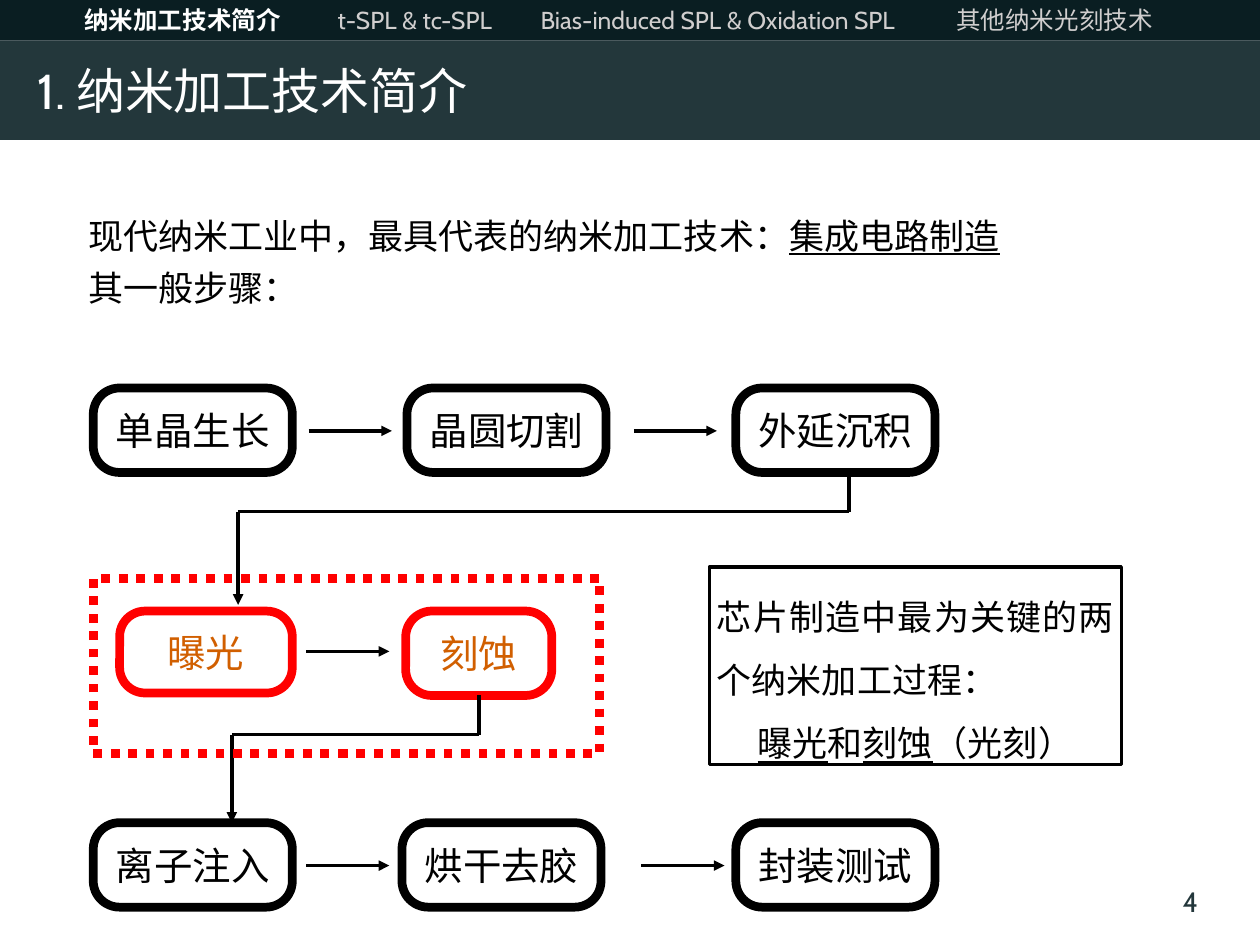
from dataclasses import dataclass

from lxml.etree import SubElement
from pptx import Presentation
from pptx.dml.color import RGBColor
from pptx.enum.dml import MSO_LINE
from pptx.enum.shapes import MSO_CONNECTOR, MSO_SHAPE
from pptx.enum.text import MSO_ANCHOR as Anchor, PP_ALIGN as Align
from pptx.oxml.ns import qn
from pptx.util import Inches, Pt

CELL = 0.1


@dataclass(frozen=True)
class Theme:
    """Colours, fonts, type sizes and line widths of the slide."""
    black: str = "000000"
    white: str = "FFFFFF"
    red: str = "FF0000"
    orange: str = "D15F00"
    grey: str = "D0CECE"
    teal: str = "23373B"
    dark: str = "0A1E22"
    latin: str = "Cabin"
    chinese: str = "Noto Sans CJK SC"
    title: int = 28
    step: int = 22
    body: int = 20
    number: int = 16
    navigation: int = 14
    border: int = 5
    rule: int = 2


THEME = Theme()


@dataclass(frozen=True)
class Box:
    """An area measured in grid columns and rows."""
    left: float
    top: float
    width: float
    height: float

    def inner(self, left, top, width, height):
        """Return an area placed relative to this one."""
        return Box(self.left + left, self.top + top, width, height)

    def inches(self):
        """Return the area as slide lengths."""
        return [Inches(round(n * CELL, 3)) for n in (self.left, self.top, self.width, self.height)]


def add_panel(slide, box, kind=MSO_SHAPE.RECTANGLE, fill=None, line=None, width=THEME.border):
    """Add a preset shape with a plain fill and outline."""
    shape = slide.shapes.add_shape(kind, *box.inches())
    shape.shadow.inherit = False
    if fill:
        shape.fill.solid()
        shape.fill.fore_color.rgb = RGBColor.from_string(fill)
    else:
        shape.fill.background()
    if line:
        shape.line.color.rgb = RGBColor.from_string(line)
        shape.line.width = Pt(width)
    else:
        shape.line.fill.background()
    return shape


def prepare_frame(shape, anchor, insets=(0.1, 0.05, 0.1, 0.05)):
    """Set the wrapping, anchor and margins of a text frame."""
    frame = shape.text_frame
    frame.word_wrap = True
    frame.vertical_anchor = anchor
    frame.margin_left, frame.margin_top, frame.margin_right, frame.margin_bottom = map(Inches, insets)
    return frame


def write_paragraph(paragraph, pieces, size, color, align, font=THEME.latin):
    """Write runs, underlining the pieces that are flagged."""
    paragraph.alignment = align
    paragraph.font.size = Pt(size)
    paragraph.font.color.rgb = RGBColor.from_string(color)
    paragraph.font.name = font
    defaults = paragraph._p.get_or_add_pPr().get_or_add_defRPr()
    SubElement(defaults, qn("a:ea"), typeface=THEME.chinese)
    for text, underlined in pieces:
        run = paragraph.add_run()
        run.text = text
        if underlined:
            run.font.underline = True


def add_line(slide, box, start, end, arrow=False, source=None):
    """Draw a straight line between two points of the box."""
    points = [Inches(round((origin + offset) * CELL, 3))
              for point in (start, end)
              for origin, offset in zip((box.left, box.top), point)]
    connector = slide.shapes.add_connector(MSO_CONNECTOR.STRAIGHT, *points)
    if source:
        connector.begin_connect(source, 2)
    connector.line.color.rgb = RGBColor.from_string(THEME.black)
    connector.line.width = Pt(THEME.rule)
    properties = connector._element.spPr
    if arrow:
        SubElement(properties.find(qn("a:ln")), qn("a:tailEnd"), type="triangle")
    SubElement(properties, qn("a:effectLst"))


def add_route(slide, box, points, source=None):
    """Draw a chain of lines that ends in an arrowhead."""
    last = len(points) - 2
    for index, (start, end) in enumerate(zip(points, points[1:])):
        add_line(slide, box, start, end, index == last, None if index else source)


def add_navigation(slide, box):
    """Add the section bar with the current section in bold."""
    frame = prepare_frame(add_panel(slide, box, fill=THEME.dark), Anchor.MIDDLE, (0, 0.05, 0, 0.05))
    paragraph = frame.paragraphs[0]
    tabs = SubElement(paragraph._p.get_or_add_pPr(), qn("a:tabLst"))
    for column in (6.7, 26.8, 42.9, 75.9):
        SubElement(tabs, qn("a:tab"), pos=str(Inches(column * CELL)), algn="l")
    sections = ("纳米加工技术简介", "t-SPL & tc-SPL", "Bias-induced SPL & Oxidation SPL", "其他纳米光刻技术")
    write_paragraph(paragraph, [("\t" + name, False) for name in sections],
                    THEME.navigation, THEME.grey, Align.LEFT)
    current = paragraph.runs[0].font
    current.bold = True
    current.color.rgb = RGBColor.from_string(THEME.white)


def add_title(slide, box):
    """Add the title band."""
    frame = prepare_frame(add_panel(slide, box, fill=THEME.teal), Anchor.MIDDLE, (0.3, 0.05, 0.1, 0.05))
    write_paragraph(frame.paragraphs[0], [("1. 纳米加工技术简介", False)],
                    THEME.title, THEME.white, Align.LEFT)


def add_introduction(slide, box):
    """Add the two opening lines."""
    frame = prepare_frame(slide.shapes.add_textbox(*box.inches()), Anchor.TOP)
    first, second = frame.paragraphs[0], frame.add_paragraph()
    second.space_before = Pt(6)
    write_paragraph(first, [("现代纳米工业中，最具代表的纳米加工技术：", False), ("集成电路制造", True)],
                    THEME.body, THEME.black, Align.JUSTIFY)
    write_paragraph(second, [("其一般步骤：", False)], THEME.body, THEME.black, Align.JUSTIFY)


def add_step(slide, box, label, line=THEME.black, color=THEME.black):
    """Add one rounded process step."""
    shape = add_panel(slide, box, MSO_SHAPE.ROUNDED_RECTANGLE, THEME.white, line)
    shape.adjustments[0] = 0.31
    frame = prepare_frame(shape, Anchor.MIDDLE, (0.06,) * 4)
    write_paragraph(frame.paragraphs[0], [(label, False)], THEME.step, color, Align.CENTER, THEME.chinese)
    return shape


def add_flow(slide, box):
    """Add the process steps, their arrows and the dotted frame."""
    for top, steps in ((0, (("单晶生长", 0), ("晶圆切割", 24.9), ("外延沉积", 51))),
                       (34.5, (("离子注入", 0), ("烘干去胶", 24.5), ("封装测试", 51)))):
        for label, left in steps:
            add_step(slide, box.inner(left, top, 15.8, 6.7), label)
    add_step(slide, box.inner(2.1, 17.7, 13.7, 6.5), "曝光", THEME.red, THEME.orange)
    etching = add_step(slide, box.inner(24.8, 17.7, 11.6, 6.7), "刻蚀", THEME.red, THEME.orange)
    for left, top in ((17.1, 3.4), (42.9, 3.4), (16.9, 20.9), (16.9, 37.9), (43.5, 37.9)):
        add_line(slide, box, (left, top), (left + 6.6, top), arrow=True)
    add_route(slide, box, [(60, 7), (60, 9.8), (11.5, 9.8), (11.5, 17.2)])
    add_route(slide, box, [(30.6, 24.4), (30.6, 27.5), (11, 27.5), (11, 34.5)], etching)
    frame = add_panel(slide, box.inner(0, 15.1, 40.2, 13.9), line=THEME.red)
    frame.line.dash_style = MSO_LINE.ROUND_DOT


def add_note(slide, box):
    """Add the outlined remark on the key steps."""
    shape = add_panel(slide, box, line=THEME.black, width=THEME.rule)
    frame = prepare_frame(shape, Anchor.TOP, (0.06,) * 4)
    lines = (([("芯片制造中最为关键的两个纳米加工过程：", False)], Align.JUSTIFY),
             ([("曝光", True), ("和", False), ("刻蚀", True), ("（光刻）", False)], Align.CENTER))
    for paragraph, (pieces, align) in zip((frame.paragraphs[0], frame.add_paragraph()), lines):
        paragraph.line_spacing = 1.5
        write_paragraph(paragraph, pieces, THEME.body, THEME.black, align, THEME.chinese)


def add_page_number(slide, box):
    """Add the page number."""
    frame = prepare_frame(slide.shapes.add_textbox(*box.inches()), Anchor.MIDDLE, (0.1, 0.05, 0, 0.05))
    write_paragraph(frame.paragraphs[0], [("4", False)], THEME.number, THEME.teal, Align.RIGHT)


def main():
    """Build and save the presentation."""
    presentation = Presentation()
    presentation.slide_width, presentation.slide_height = Inches(10), Inches(7.5)
    slide = presentation.slides.add_slide(presentation.slide_layouts[6])
    page = Box(0, 0, 100, 75)
    add_title(slide, page.inner(0, 3.2, 100, 7.9))
    add_page_number(slide, page.inner(72.6, 69.5, 22.5, 4))
    add_navigation(slide, page.inner(0, 0, 100, 3.2))
    add_introduction(slide, page.inner(6, 16.5, 84.2, 8.6))
    add_flow(slide, page.inner(7.4, 30.8, 66.8, 41.2))
    add_note(slide, page.inner(56.3, 45, 32.7, 15.7))
    presentation.save("out.pptx")


if __name__ == "__main__":
    main()
